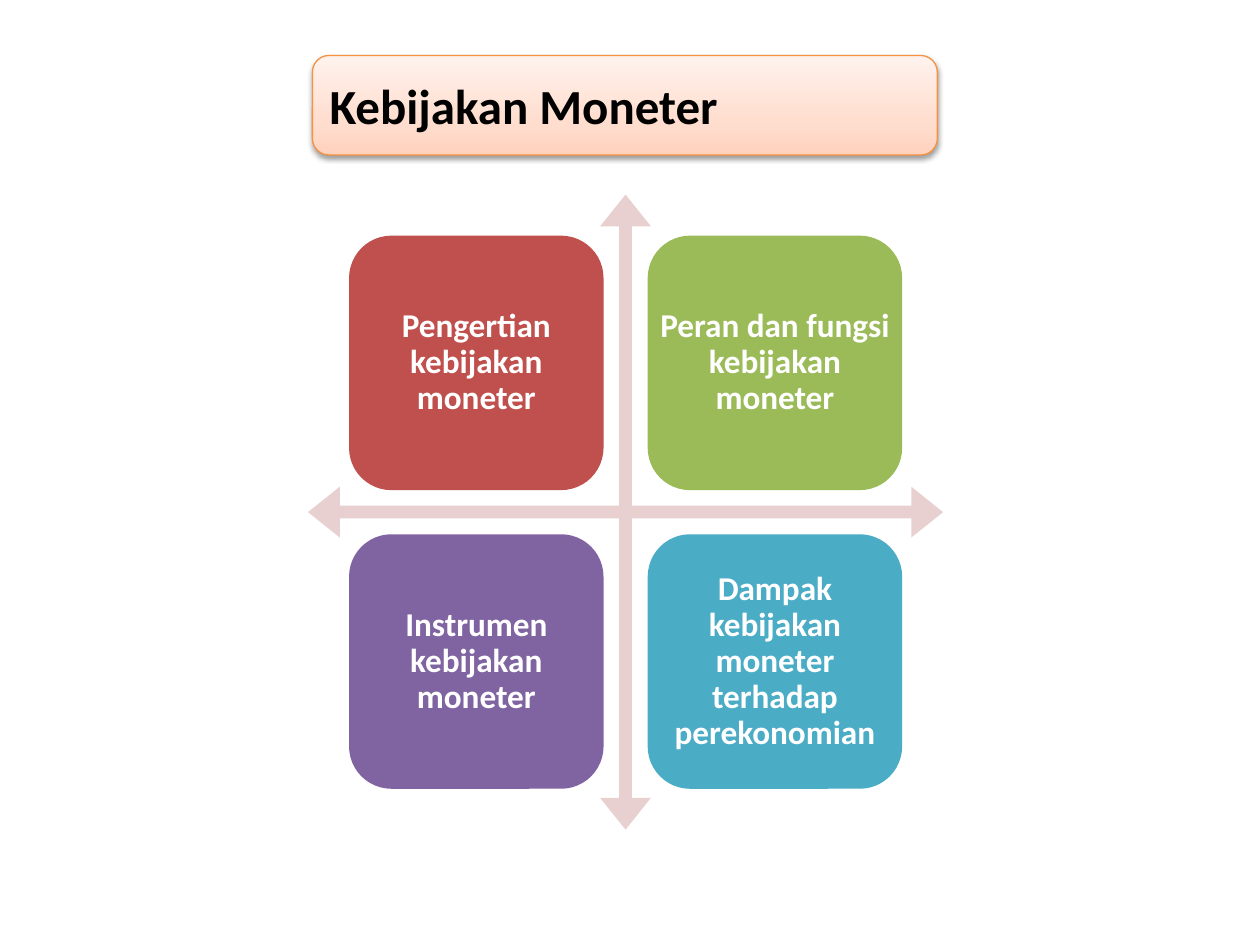
import pptx
import pptx.util
import pptx.dml.color
import pptx.enum.shapes
import pptx.enum.text
import pptx.oxml
import pptx.oxml.ns

Inch = pptx.util.Inches
Pt = pptx.util.Pt
Kind = pptx.enum.shapes.MSO_SHAPE
Align = pptx.enum.text.PP_ALIGN
qn = pptx.oxml.ns.qn

WIDE, HIGH = 10, 7.5
# Grid of cards: left, top, card side, step to the next card
LEFT, TOP, SIDE, STEP = 2.77, 1.87, 2.02, 2.37
CARDS = [
    ("Pengertian kebijakan moneter", "C0504D"),
    ("Peran dan fungsi kebijakan moneter", "9BBB59"),
    ("Instrumen kebijakan moneter", "8064A2"),
    ("Dampak kebijakan moneter terhadap perekonomian", "4BACC6"),
]
STOPS = [(0, "FFD2BD"), (35, "FFDED0"), (100, "FFF2ED")]


def color(code):
    return pptx.dml.color.RGBColor.from_string(code)


def add_shape(slide, kind, box, fill=None):
    shape = slide.shapes.add_shape(kind, *map(Inch, box))
    shape.shadow.inherit = False
    shape.line.fill.background()
    if fill:
        shape.fill.solid()
        shape.fill.fore_color.rgb = color(fill)
    return shape


def set_text(shape, text, size, ink, align):
    frame = shape.text_frame
    frame.word_wrap = True
    frame.vertical_anchor = pptx.enum.text.MSO_ANCHOR.MIDDLE
    para = frame.paragraphs[0]
    para.text = text
    para.alignment = align
    font = para.font
    font.name, font.size, font.bold = "Calibri", Pt(size), True
    font.color.rgb = color(ink)
    return frame


def add_card(slide, col, row, text, fill):
    box = (LEFT + col * STEP, TOP + row * STEP, SIDE, SIDE)
    add_shape(slide, Kind.ROUNDED_RECTANGLE, box, fill)
    label = slide.shapes.add_textbox(*map(Inch, box))
    frame = set_text(label, text, 19, "FFFFFF", Align.CENTER)
    frame.margin_left = frame.margin_right = Inch(0.08)
    frame.margin_top = frame.margin_bottom = Inch(0.08)
    frame.paragraphs[0].line_spacing = 0.9


def add_arrows(slide):
    span = 5.04
    mid = LEFT + (STEP + SIDE) / 2
    box = (mid - span / 2, TOP + (STEP + SIDE - span) / 2, span, span)
    cross = add_shape(slide, Kind.QUAD_ARROW, box, "E8D0D0")
    for i, share in enumerate((0.02, 0.04, 0.05)):
        cross.adjustments[i] = share


def add_title(slide, text):
    wide = 4.96
    box = ((WIDE - wide) / 2 - 0.04, 0.44, wide, 0.79)
    title = add_shape(slide, Kind.ROUNDED_RECTANGLE, box)
    title.line.color.rgb = color("F69240")
    title.line.width = Pt(0.75)
    set_text(title, text, 28, "000000", Align.LEFT)

    # Three-stop gradient, rising from the bottom edge
    title.fill.gradient()
    title.fill.gradient_angle = 90
    props = title.element.spPr
    stops = props.find(".//" + qn("a:gsLst"))
    for stop in list(stops):
        stops.remove(stop)
    for share, code in STOPS:
        stop = stops.makeelement(qn("a:gs"), {"pos": str(share * 1000)})
        stop.append(stop.makeelement(qn("a:srgbClr"), {"val": code}))
        stops.append(stop)

    # Soft shadow below
    space = pptx.oxml.ns.nsdecls("a")
    props.find(qn("a:effectLst")).append(pptx.oxml.parse_xml(
        f'<a:outerShdw {space} blurRad="{Pt(3.1)}" dist="{Pt(1.6)}" '
        'dir="5400000" rotWithShape="0"><a:srgbClr val="000000">'
        '<a:alpha val="38000"/></a:srgbClr></a:outerShdw>'))


def main():
    deck = pptx.Presentation()
    deck.slide_width, deck.slide_height = Inch(WIDE), Inch(HIGH)
    slide = deck.slides.add_slide(deck.slide_layouts[6])

    # Crossed arrows behind the two-by-two grid
    add_arrows(slide)
    for i, (text, fill) in enumerate(CARDS):
        row, col = divmod(i, 2)
        add_card(slide, col, row, text, fill)

    add_title(slide, "Kebijakan Moneter")
    deck.save("out.pptx")


if __name__ == "__main__":
    main()
